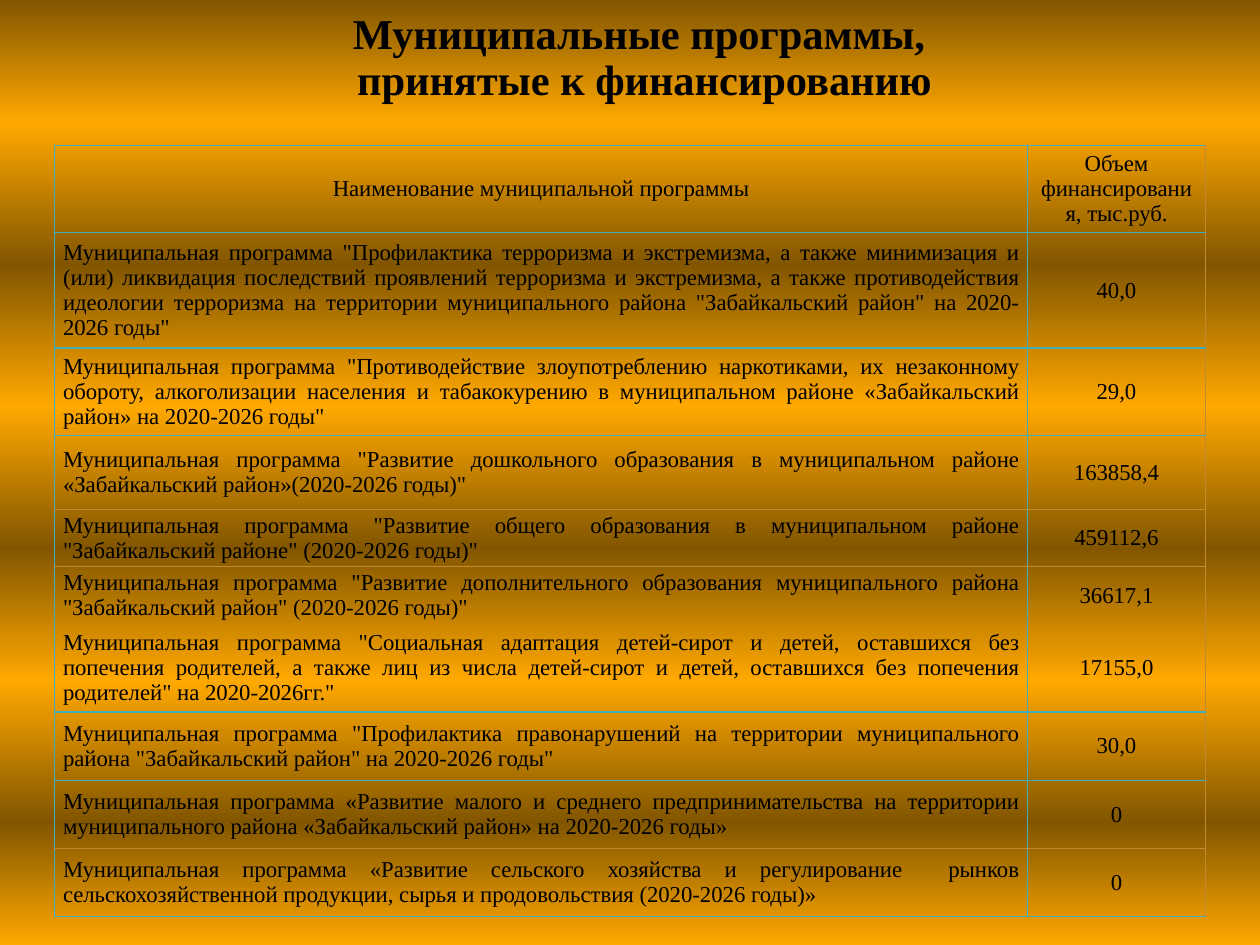
from lxml import etree
from pptx import Presentation
from pptx.dml.color import RGBColor
from pptx.enum.text import MSO_ANCHOR, MSO_AUTO_SIZE, PP_ALIGN
from pptx.oxml import parse_xml
from pptx.oxml.ns import nsdecls, qn
from pptx.util import Pt

FONT = "Times New Roman"
BLACK = RGBColor(0x00, 0x00, 0x00)
BROWN = RGBColor(0x82, 0x56, 0x00)
ORANGE = RGBColor(0xFF, 0xA8, 0x00)
TEAL = RGBColor(0x41, 0xAE, 0xBD)
TAN = RGBColor(0xC0, 0x8A, 0x30)

HEADING = "Муниципальные программы, \vпринятые к финансированию"
HEADER = ("Наименование муниципальной программы", "Объем финансирования, тыс.руб.")
PROGRAMS = [
    ('Муниципальная программа "Профилактика терроризма и экстремизма, а также минимизация и (или) '
     'ликвидация последствий проявлений терроризма и экстремизма, а также противодействия идеологии '
     'терроризма на территории муниципального района "Забайкальский район" на 2020-2026 годы"', "40,0"),
    ('Муниципальная программа "Противодействие злоупотреблению наркотиками, их незаконному обороту, '
     'алкоголизации населения и табакокурению в муниципальном районе «Забайкальский район» '
     'на 2020-2026 годы"', "29,0"),
    ('Муниципальная программа "Развитие дошкольного образования в муниципальном районе '
     '«Забайкальский район»(2020-2026 годы)"', "163858,4"),
    ('Муниципальная программа "Развитие общего образования в муниципальном районе '
     '"Забайкальский районе" (2020-2026 годы)"', "459112,6"),
    ('Муниципальная программа "Развитие дополнительного образования муниципального района '
     '"Забайкальский район" (2020-2026 годы)"', "36617,1"),
    ('Муниципальная программа "Социальная адаптация детей-сирот и детей, оставшихся без попечения '
     'родителей, а также лиц из числа детей-сирот и детей, оставшихся без попечения родителей" '
     'на 2020-2026гг."', "17155,0"),
    ('Муниципальная программа "Профилактика правонарушений на территории муниципального района '
     '"Забайкальский район" на 2020-2026 годы"', "30,0"),
    ('Муниципальная программа «Развитие малого и среднего предпринимательства на территории '
     'муниципального района «Забайкальский район» на 2020-2026 годы»', "0"),
    ('Муниципальная программа «Развитие сельского хозяйства и регулирование  рынков '
     'сельскохозяйственной продукции, сырья и продовольствия (2020-2026 годы)»', "0"),
]
COLUMN_WIDTHS = (556, 102)
ROW_HEIGHTS = (50, 66, 50, 42, 33, 33, 50, 39, 39, 39)
GRADIENT_POSITIONS = (0, 13, 28, 43, 58, 72, 87, 100)
STRONG, FAINT, HIDDEN = (TEAL, 1), (TAN, 0.5), None
ROW_RULES = {4: FAINT, 5: FAINT, 6: HIDDEN, 9: FAINT}
NO_STYLE = "{2D5ABB26-0587-4C30-8999-92F81FD0307C}"


def paint_background(slide):
    fill = slide.background.fill
    fill.gradient()
    fill.gradient_angle = 270
    stops = fill.gradient_stops
    stop_list = slide.background._cSld.find(".//" + qn("a:gsLst"))
    for stop in list(stop_list):
        stop_list.remove(stop)
    for index, position in enumerate(GRADIENT_POSITIONS):
        color = (BROWN, ORANGE)[index % 2]
        stop_list.append(parse_xml(
            f'<a:gs {nsdecls("a")} pos="{position * 1000}"><a:srgbClr val="{color}"/></a:gs>'))


def style_text(frame, align, size, bold=False):
    for paragraph in frame.paragraphs:
        paragraph.alignment = align
        for run in paragraph.runs:
            run.font.name, run.font.size = FONT, Pt(size)
            run.font.bold, run.font.color.rgb = bold, BLACK


def draw_border(cell, side, rule):
    properties = cell._tc.get_or_add_tcPr()
    line = etree.SubElement(properties, qn("a:ln" + side))
    if rule is HIDDEN:
        etree.SubElement(line, qn("a:noFill"))
        return
    color, width = rule
    line.set("w", str(Pt(width)))
    fill = etree.SubElement(line, qn("a:solidFill"))
    etree.SubElement(fill, qn("a:srgbClr"), val=str(color))


def add_heading(slide):
    heading = slide.shapes.title
    heading.left, heading.top, heading.width, heading.height = Pt(16.5), Pt(11.5), Pt(703.5), Pt(44.5)
    frame = heading.text_frame
    frame.text = HEADING
    frame.auto_size = MSO_AUTO_SIZE.NONE
    frame.vertical_anchor = MSO_ANCHOR.MIDDLE
    frame.paragraphs[0].line_spacing = 0.9
    style_text(frame, PP_ALIGN.CENTER, 24.3, bold=True)


def add_programs(slide):
    rows = [HEADER] + PROGRAMS
    frame = slide.shapes.add_table(len(rows), len(HEADER), Pt(31), Pt(83),
                                   Pt(sum(COLUMN_WIDTHS)), Pt(sum(ROW_HEIGHTS)))
    programs = frame.table
    programs.first_row = programs.horz_banding = False
    programs._tbl.tblPr.find(qn("a:tableStyleId")).text = NO_STYLE
    for column, width in zip(programs.columns, COLUMN_WIDTHS):
        column.width = Pt(width)
    for r, (row, height) in enumerate(zip(rows, ROW_HEIGHTS)):
        programs.rows[r].height = Pt(height)
        for c, content in enumerate(row):
            cell = programs.cell(r, c)
            cell.text_frame.text = content
            cell.vertical_anchor = MSO_ANCHOR.MIDDLE
            cell.margin_left = cell.margin_right = Pt(5)
            cell.margin_top = cell.margin_bottom = 0
            justified = r > 0 and c == 0
            style_text(cell.text_frame, PP_ALIGN.JUSTIFY if justified else PP_ALIGN.CENTER, 13)
            draw_border(cell, "L", STRONG)
            draw_border(cell, "R", STRONG if c == 0 else FAINT)
            draw_border(cell, "T", ROW_RULES.get(r, STRONG))
            draw_border(cell, "B", ROW_RULES.get(r + 1, STRONG))
            cell.fill.background()


def main():
    deck = Presentation()
    deck.slide_width, deck.slide_height = Pt(720), Pt(540)
    slide = deck.slides.add_slide(deck.slide_layouts[5])
    paint_background(slide)
    add_heading(slide)
    add_programs(slide)
    deck.save("out.pptx")


if __name__ == "__main__":
    main()
